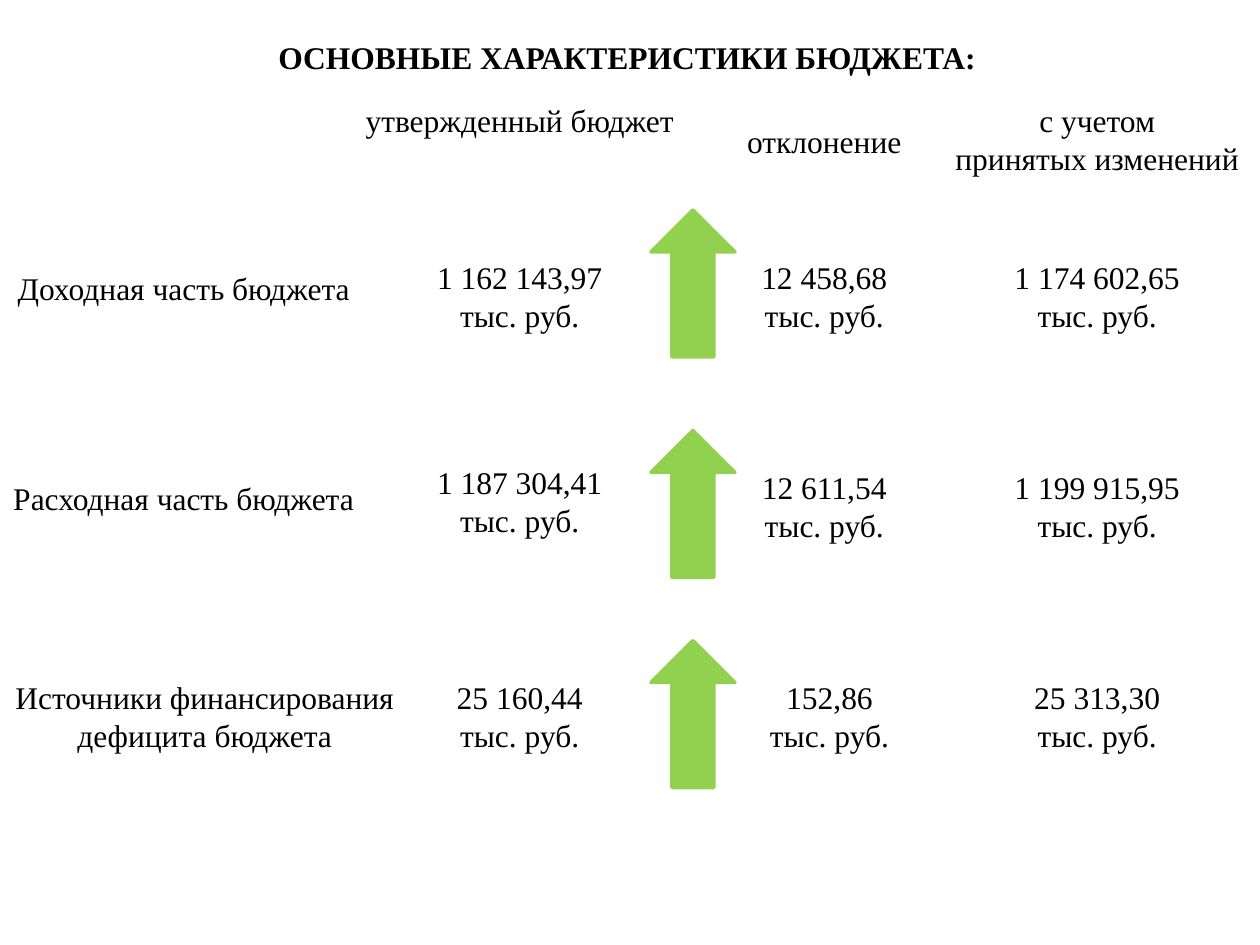
from dataclasses import dataclass

from pptx import Presentation
from pptx.dml.color import RGBColor
from pptx.enum.shapes import MSO_SHAPE as Preset
from pptx.enum.text import MSO_ANCHOR as Anchor, MSO_AUTO_SIZE as AutoSize, PP_ALIGN as Align
from pptx.shapes.base import BaseShape
from pptx.slide import Slide
from pptx.util import Inches, Length, Pt


@dataclass(frozen=True)
class Theme:
    font: str = "Times New Roman"
    size: Length = Pt(18)
    text: RGBColor = RGBColor(0, 0, 0)
    arrow: RGBColor = RGBColor(0x92, 0xD0, 0x50)
    arrow_line: Length = Pt(2)


@dataclass(frozen=True)
class Column:
    left: float
    width: float


@dataclass(frozen=True)
class Heading:
    column: Column
    top: float
    lines: tuple[str, ...]


@dataclass(frozen=True)
class BudgetRow:
    label: str
    label_column: Column
    label_top: float
    approved: str
    approved_top: float
    deviation: str
    deviation_column: Column
    amended: str
    top: float
    arrow_top: float


THEME = Theme()
GRID_COLUMNS, GRID_ROWS = 120, 90
CELL = Inches(10) / GRID_COLUMNS
LINE_HEIGHT, BOX_PADDING = 3.7, 1.1
UNIT = "тыс. руб."

LABELS, WIDE_LABELS = Column(0, 35), Column(0, 39)
APPROVED, AMENDED = Column(40, 19), Column(95, 19)
DEVIATION, WIDE_DEVIATION = Column(71, 15), Column(71, 16)
ARROWS, ARROW_HEIGHT = Column(62, 8), 14
TITLE = Heading(Column(25, 69.5), 3, ("ОСНОВНЫЕ ХАРАКТЕРИСТИКИ БЮДЖЕТА:",))

HEADINGS = (
    Heading(Column(33, 33), 9, ("утвержденный бюджет",)),
    Heading(Column(69, 19), 11, ("отклонение",)),
    Heading(Column(89, 31), 9, ("с учетом", "принятых изменений")),
)
BUDGET = (
    BudgetRow("Доходная часть бюджета", LABELS, 25, "1 162 143,97", 24,
              "12 458,68", DEVIATION, "1 174 602,65", 24, 20),
    BudgetRow("Расходная часть бюджета", LABELS, 45, "1 187 304,41", 43.5,
              "12 611,54", DEVIATION, "1 199 915,95", 44, 41),
    BudgetRow("Источники финансирования дефицита бюджета", WIDE_LABELS, 64, "25 160,44", 64,
              "152,86", WIDE_DEVIATION, "25 313,30", 64, 61),
)


def place(column: Column, top: float, height: float) -> tuple[Length, ...]:
    """Turn grid cells into left, top, width and height."""
    return tuple(Length(round(cells * CELL)) for cells in (column.left, top, column.width, height))


def write_lines(box: BaseShape, lines: tuple[str, ...], bold: bool = False) -> None:
    frame = box.text_frame
    frame.text = "\n".join(lines)
    frame.word_wrap = not bold
    frame.vertical_anchor = Anchor.TOP
    frame.auto_size = AutoSize.SHAPE_TO_FIT_TEXT
    for para in frame.paragraphs:
        para.alignment = Align.CENTER
        para.line_spacing = 1.0
        para.space_before = Pt(0)
        font = para.font
        font.name, font.size, font.bold = THEME.font, THEME.size, bold
        font.color.rgb = THEME.text


def box_height(line_count: int) -> float:
    return line_count * LINE_HEIGHT + BOX_PADDING


def add_text(page: Slide, column: Column, top: float, *lines: str, rows: int = 0) -> None:
    height = box_height(rows or len(lines))
    write_lines(page.shapes.add_textbox(*place(column, top, height)), lines)


def add_title(page: Slide, title: Heading) -> None:
    box = page.shapes.title
    box.left, box.top, box.width, box.height = place(title.column, title.top, box_height(1))
    write_lines(box, title.lines, bold=True)


def add_growth_arrow(page: Slide, top: float) -> None:
    arrow = page.shapes.add_shape(Preset.UP_ARROW, *place(ARROWS, top, ARROW_HEIGHT))
    arrow.shadow.inherit = False
    arrow.fill.solid()
    arrow.fill.fore_color.rgb = THEME.arrow
    arrow.line.color.rgb = THEME.arrow
    arrow.line.width = THEME.arrow_line


def add_budget_row(page: Slide, row: BudgetRow) -> None:
    label_rows = 2 if row.label_column == WIDE_LABELS else 1
    add_text(page, row.label_column, row.label_top, row.label, rows=label_rows)
    add_text(page, APPROVED, row.approved_top, row.approved, UNIT)
    add_growth_arrow(page, row.arrow_top)
    add_text(page, row.deviation_column, row.top, row.deviation, UNIT)
    add_text(page, AMENDED, row.top, row.amended, UNIT)


def main() -> None:
    deck = Presentation()
    deck.slide_width = Length(round(GRID_COLUMNS * CELL))
    deck.slide_height = Length(round(GRID_ROWS * CELL))
    page = deck.slides.add_slide(deck.slide_layouts.get_by_name("Title Only"))
    add_title(page, TITLE)
    for heading in HEADINGS:
        add_text(page, heading.column, heading.top, *heading.lines)
    for row in BUDGET:
        add_budget_row(page, row)
    deck.save("out.pptx")


if __name__ == "__main__":
    main()
